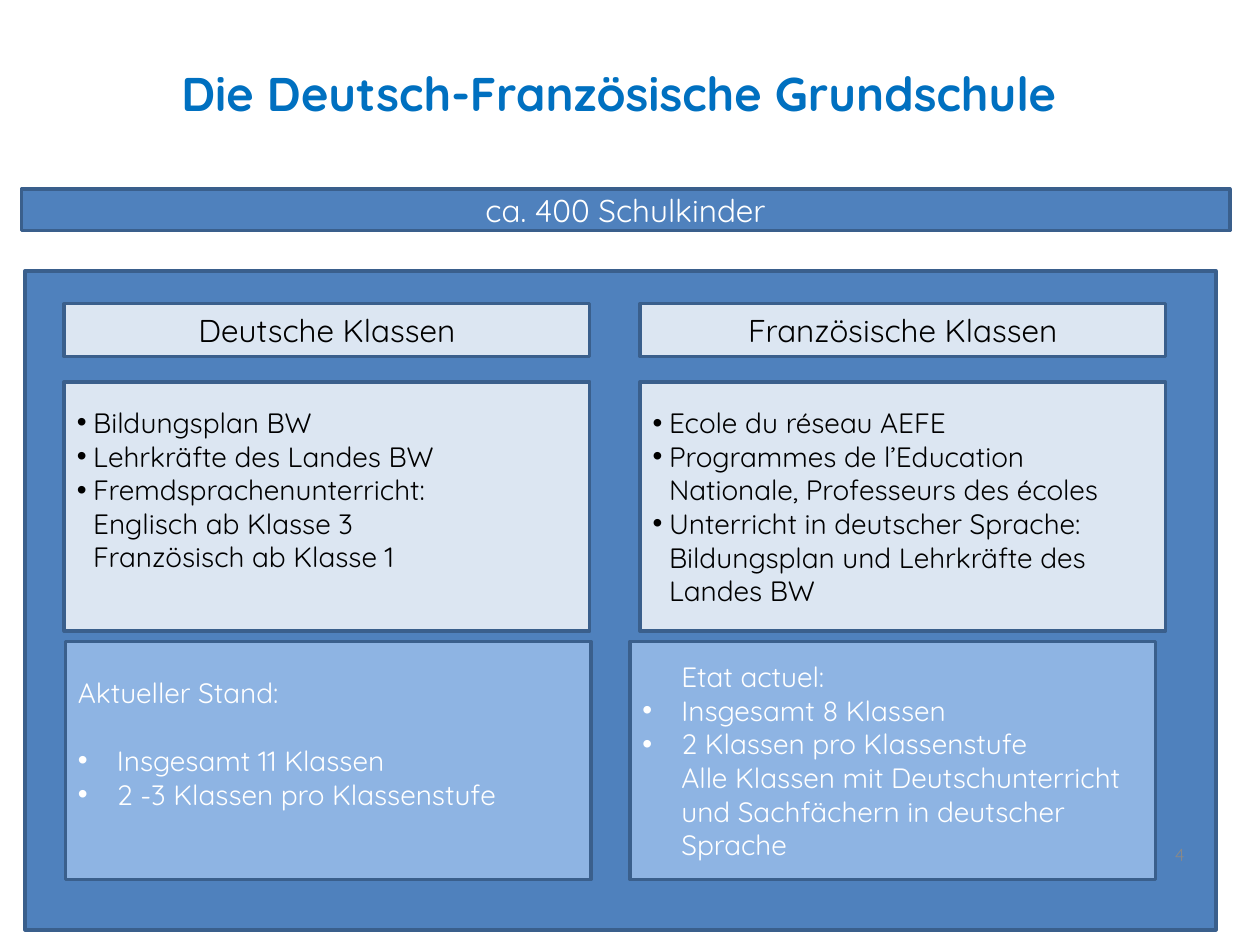
"""Build the slide about the German-French primary school."""
from dataclasses import dataclass
from enum import Enum
from typing import Optional

from lxml import etree
from pptx import Presentation
from pptx import util as u
from pptx.dml.color import RGBColor
from pptx.enum import shapes, text
from pptx.oxml.ns import qn

WIDTH, HEIGHT = u.Inches(10), u.Inches(7.5)
FONT = "Quicksand"
TITLE_BLUE = RGBColor(0x00, 0x70, 0xC0)
BLUE = RGBColor(0x4F, 0x81, 0xBD)
BORDER = RGBColor(0x3A, 0x5F, 0x8C)
MID_BLUE = RGBColor(0x8E, 0xB4, 0xE3)
PALE_BLUE = RGBColor(0xDC, 0xE6, 0xF2)
WHITE = RGBColor(0xFF, 0xFF, 0xFF)
BLACK = RGBColor(0x00, 0x00, 0x00)
GREY = RGBColor(0x89, 0x89, 0x89)
LEFT, RIGHT, COLUMN = 0.51, 5.08, 4.17
HEADING_TOP, LIST_TOP, STATUS_TOP = 2.41, 3.03, 5.09
HEADING_HEIGHT, LIST_HEIGHT, STATUS_HEIGHT = 0.42, 1.98, 1.89
BLANK_LINE = 0.27


class Kind(Enum):
    """How a line of a list is set."""
    BULLET = "bullet"
    INDENTED = "indented"
    FLUSH = "flush"


@dataclass(frozen=True)
class Box:
    """Position of a box in inches."""
    left: float
    top: float
    width: float
    height: float


@dataclass(frozen=True)
class Line:
    """One paragraph of a list."""
    text: str
    kind: Kind = Kind.BULLET
    space_after: float = 0


@dataclass(frozen=True)
class Listing:
    """A framed list, in a placeholder when it has an index."""
    box: Box
    lines: tuple[Line, ...]
    fill: RGBColor
    color: RGBColor
    indent: float
    free_below: float = 0
    placeholder: Optional[int] = None


@dataclass(frozen=True)
class Heading:
    """A framed column heading in a placeholder."""
    placeholder: int
    left: float
    text: str


HEADINGS = (Heading(1, LEFT, "Deutsche Klassen"), Heading(3, RIGHT, "Französische Klassen"))
LISTINGS = (
    Listing(Box(LEFT, LIST_TOP, COLUMN, LIST_HEIGHT), (
        Line("Bildungsplan BW"),
        Line("Lehrkräfte des Landes BW"),
        Line("Fremdsprachenunterricht:"),
        Line("Englisch ab Klasse 3", Kind.INDENTED),
        Line("Französisch ab Klasse 1", Kind.INDENTED),
    ), PALE_BLUE, BLACK, 0.13, BLANK_LINE, 2),
    Listing(Box(RIGHT, LIST_TOP, COLUMN, LIST_HEIGHT), (
        Line("Ecole du réseau AEFE"),
        Line("Programmes de l’Education"),
        Line("Nationale, Professeurs des écoles", Kind.INDENTED),
        Line("Unterricht in deutscher Sprache:"),
        Line("Bildungsplan und Lehrkräfte des", Kind.INDENTED),
        Line("Landes BW", Kind.INDENTED),
    ), PALE_BLUE, BLACK, 0.13, placeholder=4),
    Listing(Box(0.52, STATUS_TOP, COLUMN, STATUS_HEIGHT), (
        Line("Aktueller Stand:", Kind.FLUSH, BLANK_LINE),
        Line("Insgesamt 11 Klassen"),
        Line("2 -3 Klassen pro Klassenstufe"),
    ), MID_BLUE, WHITE, 0.31, BLANK_LINE),
    Listing(Box(5, STATUS_TOP, COLUMN, STATUS_HEIGHT), (
        Line("Etat actuel:", Kind.INDENTED),
        Line("Insgesamt 8 Klassen"),
        Line("2 Klassen pro Klassenstufe"),
        Line("Alle Klassen mit Deutschunterricht und Sachfächern in deutscher Sprache",
             Kind.INDENTED),
    ), MID_BLUE, WHITE, 0.31),
)


def place(shape, box: Box) -> None:
    """Move a shape to its box."""
    shape.left, shape.top = u.Inches(box.left), u.Inches(box.top)
    shape.width, shape.height = u.Inches(box.width), u.Inches(box.height)


def frame(shape, fill: RGBColor) -> None:
    """Fill and outline a shape."""
    shape.fill.solid()
    shape.fill.fore_color.rgb = fill
    shape.line.color.rgb = BORDER
    shape.line.width = u.Pt(2)


def add_panel(slide, box: Box, fill: RGBColor):
    """Add a framed rectangle."""
    shape = slide.shapes.add_shape(shapes.MSO_SHAPE.RECTANGLE, 0, 0, 0, 0)
    shape.shadow.inherit = False
    place(shape, box)
    frame(shape, fill)
    return shape


def write(shape, words: str, size: float, color: RGBColor,
          align=text.PP_ALIGN.CENTER, bold: bool = False) -> None:
    """Set the text of a shape and format its runs."""
    text_frame = shape.text_frame
    text_frame.text = words
    text_frame.word_wrap = True
    text_frame.auto_size = text.MSO_AUTO_SIZE.NONE
    text_frame.vertical_anchor = text.MSO_ANCHOR.MIDDLE
    for paragraph in text_frame.paragraphs:
        paragraph.alignment = align
        paragraph.space_before = u.Pt(0)
        for run in paragraph.runs:
            run.font.name, run.font.size, run.font.bold = FONT, u.Pt(size), bold
            run.font.color.rgb = color


def set_indent(paragraph, kind: Kind, indent: float) -> None:
    """Set the indent and bullet of a paragraph."""
    properties = paragraph._p.get_or_add_pPr()
    margin = 0 if kind is Kind.FLUSH else u.Inches(indent)
    bulleted = kind is Kind.BULLET
    properties.set("marL", str(margin))
    properties.set("indent", str(-margin if bulleted else 0))
    if bulleted:
        font = etree.SubElement(properties, qn("a:buFont"))
        font.set("typeface", "Arial")
        etree.SubElement(properties, qn("a:buChar")).set("char", "•")
    else:
        etree.SubElement(properties, qn("a:buNone"))


def draw_listing(slide, listing: Listing) -> None:
    """Draw a framed list."""
    if listing.placeholder is None:
        shape = add_panel(slide, listing.box, listing.fill)
    else:
        shape = slide.placeholders[listing.placeholder]
        place(shape, listing.box)
        frame(shape, listing.fill)
    write(shape, "\n".join(line.text for line in listing.lines), 16, listing.color,
          text.PP_ALIGN.LEFT)
    shape.text_frame.margin_bottom = u.Inches(0.05 + listing.free_below)
    for paragraph, line in zip(shape.text_frame.paragraphs, listing.lines):
        set_indent(paragraph, line.kind, listing.indent)
        paragraph.space_after = u.Inches(line.space_after)


def draw_heading(slide, heading: Heading) -> None:
    """Draw a framed column heading."""
    shape = slide.placeholders[heading.placeholder]
    place(shape, Box(heading.left, HEADING_TOP, COLUMN, HEADING_HEIGHT))
    frame(shape, PALE_BLUE)
    write(shape, heading.text, 18, BLACK)


def main() -> None:
    """Build and save the presentation."""
    presentation = Presentation()
    presentation.slide_width, presentation.slide_height = WIDTH, HEIGHT
    slide = presentation.slides.add_slide(presentation.slide_layouts.get_by_name("Comparison"))
    backdrop = add_panel(slide, Box(0.2, 2.15, 9.45, 5.23), BLUE)
    slide.shapes.title.element.addprevious(backdrop.element)
    place(slide.shapes.title, Box(0.17, 0.11, 9.48, 1.25))
    write(slide.shapes.title, "Die Deutsch-Französische Grundschule", 27, TITLE_BLUE, bold=True)
    banner = add_panel(slide, Box(0.17, 1.5, 9.59, 0.33), BLUE)
    write(banner, "ca. 400 Schulkinder", 18, WHITE)
    for heading in HEADINGS:
        draw_heading(slide, heading)
    for listing in LISTINGS:
        draw_listing(slide, listing)
    number = slide.shapes.add_textbox(0, 0, 0, 0)
    place(number, Box(9, 6.58, 0.5, 0.4))
    write(number, "4", 10, GREY, text.PP_ALIGN.RIGHT)
    presentation.save("out.pptx")


if __name__ == "__main__":
    main()
